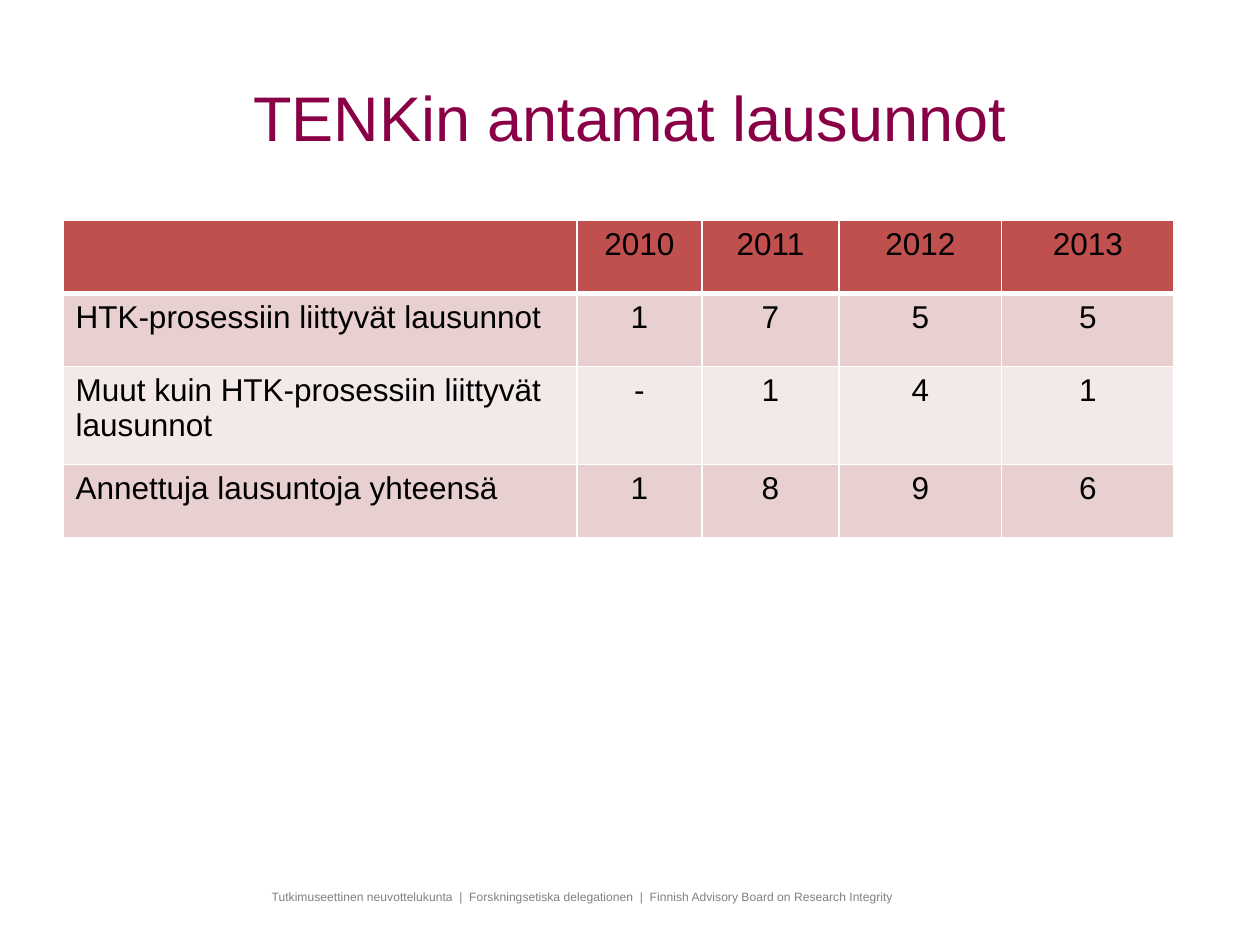
from lxml.etree import SubElement
from pptx import Presentation
from pptx.dml.color import RGBColor
from pptx.enum.text import MSO_ANCHOR, PP_ALIGN
from pptx.oxml.ns import qn
from pptx.util import Inches, Pt

SLIDE_WIDTH, SLIDE_HEIGHT = Inches(10), Inches(7.5)
COLUMN_SHARES = [4.08, 0.99, 1.09, 1.29, 1.37]
ROW_SHARES = [0.58, 0.58, 0.78, 0.58]
ROW_FILLS = ["C0504D", "E8D0D0", "F4E9E9", "E8D0D0"]
STATEMENTS = [
    ["", "2010", "2011", "2012", "2013"],
    ["HTK-prosessiin liittyvät lausunnot", "1", "7", "5", "5"],
    ["Muut kuin HTK-prosessiin liittyvät lausunnot", "-", "1", "4", "1"],
    ["Annettuja lausuntoja yhteensä", "1", "8", "9", "6"],
]


def color(value):
    return RGBColor.from_string(value)


def slide_box(left, top, width, height):
    return (
        round(SLIDE_WIDTH * left),
        round(SLIDE_HEIGHT * top),
        round(SLIDE_WIDTH * width),
        round(SLIDE_HEIGHT * height),
    )


def write_run(paragraph, text, size, text_color, alignment=PP_ALIGN.CENTER):
    paragraph.alignment = alignment
    run = paragraph.add_run()
    run.text = text
    run.font.name = "Arial"
    run.font.size = Pt(size)
    run.font.color.rgb = color(text_color)
    return run


def add_text(slide, box, text, size, text_color, anchor):
    frame = slide.shapes.add_textbox(*box).text_frame
    frame.word_wrap = True
    frame.vertical_anchor = anchor
    return write_run(frame.paragraphs[0], text, size, text_color)


def add_title(slide, box):
    add_text(slide, box, "TENKin antamat lausunnot", 36, "890047", MSO_ANCHOR.MIDDLE)


def add_footer(slide, box):
    text = (
        "Tutkimuseettinen neuvottelukunta  |  Forskningsetiska delegationen  |  "
        "Finnish Advisory Board on Research Integrity"
    )
    run = add_text(slide, box, text, 12, "808080", MSO_ANCHOR.TOP)
    run.font._element.set("baseline", "30000")


def style_cell(cell, fill, bottom_width):
    properties = cell._tc.get_or_add_tcPr()
    for side, width in (("L", 1), ("R", 1), ("T", 1), ("B", bottom_width)):
        line = SubElement(properties, qn(f"a:ln{side}"), w=str(Pt(width)))
        line_fill = SubElement(line, qn("a:solidFill"))
        SubElement(line_fill, qn("a:srgbClr"), val="FFFFFF")
    cell.fill.solid()
    cell.fill.fore_color.rgb = color(fill)


def add_statement_table(slide, box):
    table = slide.shapes.add_table(len(ROW_SHARES), len(COLUMN_SHARES), *box).table
    for column, share in zip(table.columns, COLUMN_SHARES):
        column.width = round(box[2] * share / sum(COLUMN_SHARES))
    for row, share in zip(table.rows, ROW_SHARES):
        row.height = round(box[3] * share / sum(ROW_SHARES))
    for row_index, texts in enumerate(STATEMENTS):
        for column_index, text in enumerate(texts):
            cell = table.cell(row_index, column_index)
            style_cell(cell, ROW_FILLS[row_index], 1 if row_index else 3)
            if text:
                alignment = PP_ALIGN.CENTER if column_index else PP_ALIGN.LEFT
                write_run(cell.text_frame.paragraphs[0], text, 18, "000000", alignment)


def main():
    presentation = Presentation()
    presentation.slide_width = SLIDE_WIDTH
    presentation.slide_height = SLIDE_HEIGHT
    slide = presentation.slides.add_slide(presentation.slide_layouts[6])
    add_footer(slide, slide_box(0.115, 0.932, 0.696, 0.04))
    add_title(slide, slide_box(0.05, 0.04, 0.9, 1 / 6))
    add_statement_table(slide, slide_box(0.05, 0.233, 0.882, 0.336))
    presentation.save("out.pptx")


if __name__ == "__main__":
    main()
